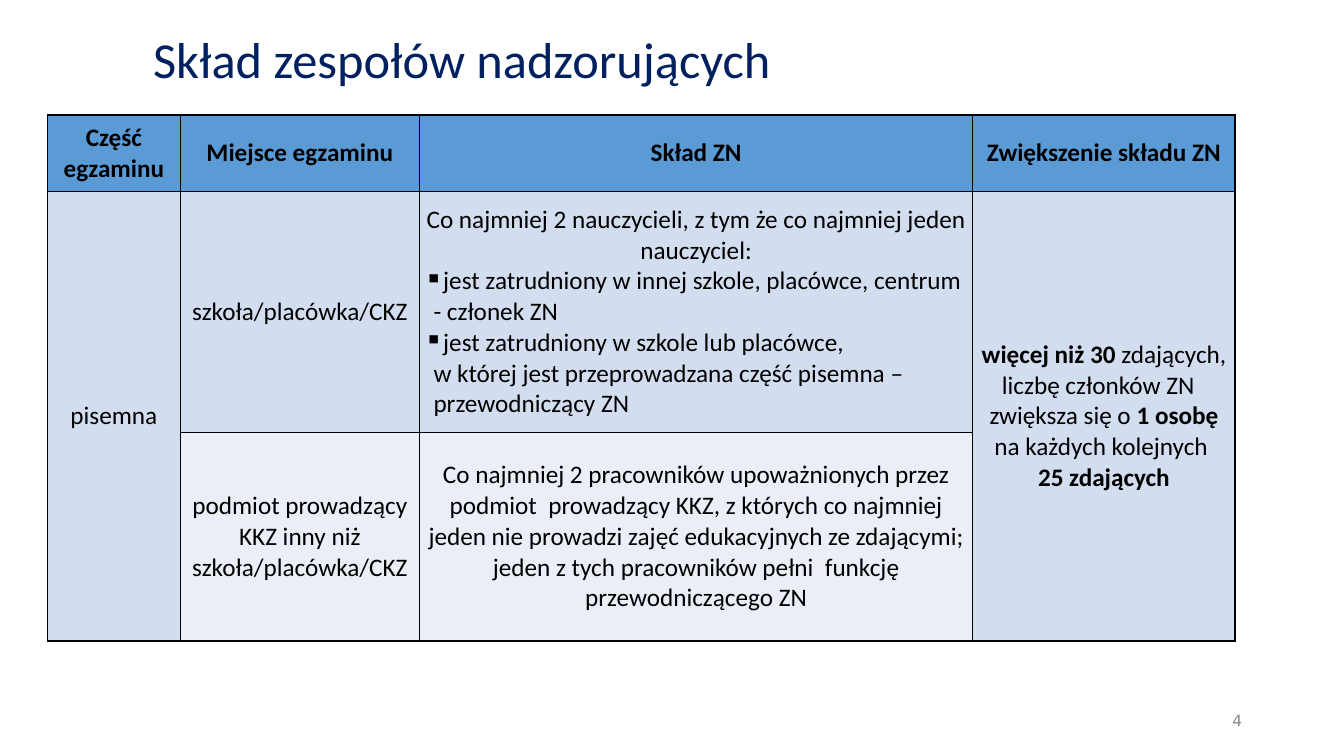
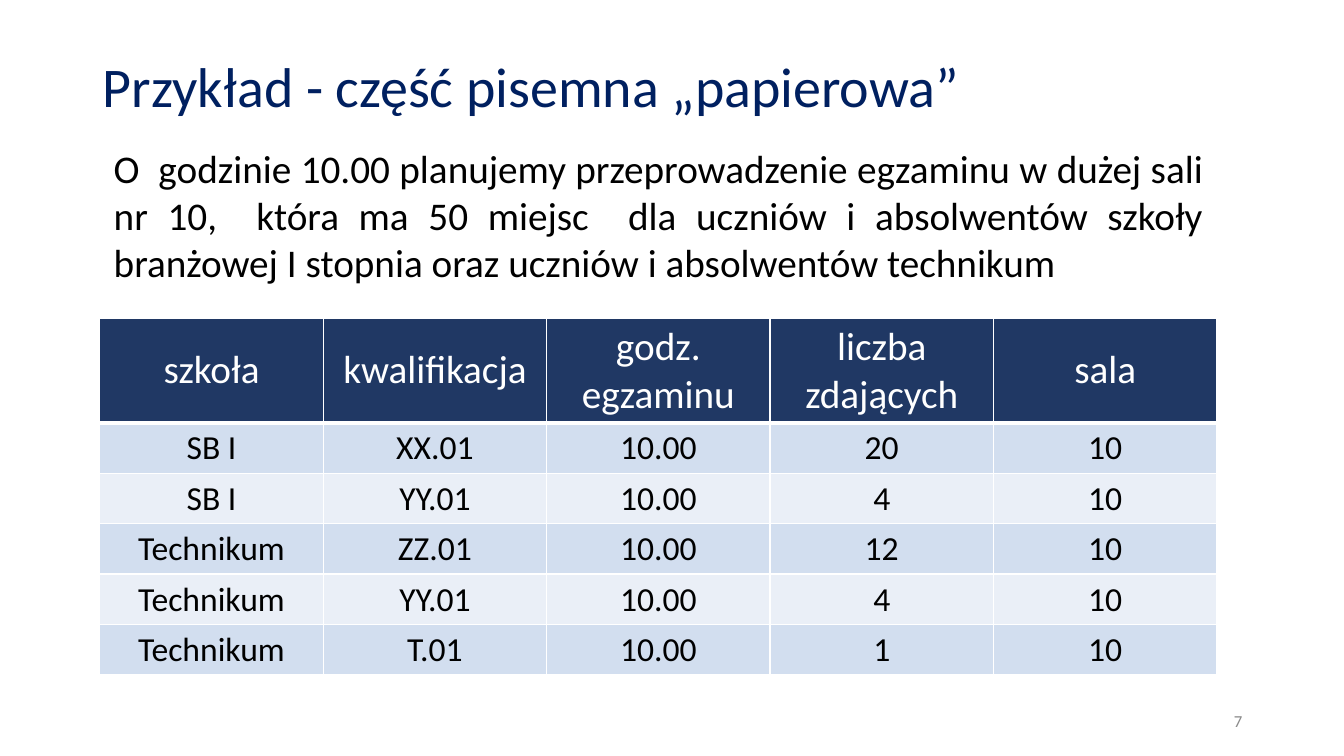
import dataclasses

import pptx
import pptx.dml.color
import pptx.enum.text
import pptx.oxml
import pptx.oxml.ns
import pptx.util

Inches = pptx.util.Inches
Pt = pptx.util.Pt
RGBColor = pptx.dml.color.RGBColor
Align = pptx.enum.text.PP_ALIGN
Anchor = pptx.enum.text.MSO_ANCHOR

NAVY = RGBColor(0x00, 0x20, 0x60)
DARK_BLUE = RGBColor(0x20, 0x38, 0x64)
BLUE = RGBColor(0x5B, 0x9B, 0xD5)
BAND = RGBColor(0xD2, 0xDE, 0xEF)
PALE_BAND = RGBColor(0xEA, 0xEF, 0xF7)
BLACK = RGBColor(0x00, 0x00, 0x00)
WHITE = RGBColor(0xFF, 0xFF, 0xFF)
GRAY = RGBColor(0x89, 0x89, 0x89)


@dataclasses.dataclass
class Paragraph:
    """Spans are (text, bold) pairs; a newline in a text is a line break."""
    spans: list
    align: Align = Align.CENTER
    bullet: str = ""
    space_after: float = 0
    line_spacing: float = 1


@dataclasses.dataclass
class Look:
    """Text size, colour and weight, with the fill and borders of a cell."""
    size: float
    color: RGBColor
    fill: RGBColor = None
    border: RGBColor = WHITE
    bottom: float = 1
    bold: bool = False
    anchor: Anchor = Anchor.MIDDLE
    inset: float = 0.1


class Deck:
    FONT = "Calibri"

    def __init__(self):
        self.deck = pptx.Presentation()
        self.deck.slide_width = Inches(13.33)
        self.deck.slide_height = Inches(7.5)
        self.page = None

    def add_page(self):
        self.page = self.deck.slides.add_slide(self.deck.slide_layouts[6])

    def add_paragraphs(self, frame, paragraphs, size, color, font=FONT):
        for index, source in enumerate(paragraphs):
            para = frame.add_paragraph() if index else frame.paragraphs[0]
            para.alignment = source.align
            para.line_spacing = source.line_spacing
            para.space_after = Pt(source.space_after)
            if source.bullet:
                self.add_bullet(para, source.bullet)
            for text, bold in source.spans:
                for number, line in enumerate(text.split("\n")):
                    if number:
                        para.add_line_break()
                    if line:
                        span = para.add_run()
                        span.text = line
                        span.font.name = font
                        span.font.size = Pt(size)
                        span.font.bold = bold
                        span.font.color.rgb = color

    def add_bullet(self, para, mark):
        properties = para._p.get_or_add_pPr()
        properties.set("marL", str(Inches(0.09)))
        properties.set("indent", str(-Inches(0.09)))
        properties.append(pptx.oxml.parse_xml(
            f'<a:buChar {pptx.oxml.ns.nsdecls("a")} char="{mark}"/>'))

    def add_text(self, place, text, size, color, align=Align.LEFT,
                 anchor=Anchor.MIDDLE, font=FONT, line_spacing=1):
        box = self.page.shapes.add_textbox(*map(Inches, place))
        frame = box.text_frame
        frame.word_wrap = True
        frame.vertical_anchor = anchor
        para = Paragraph([(text, False)], align, line_spacing=line_spacing)
        self.add_paragraphs(frame, [para], size, color, font)

    def add_title(self, place, text, size):
        self.add_text(place, text, size, NAVY, line_spacing=0.9)

    def add_page_number(self, number, size, font=FONT):
        self.add_text((9.42, 6.95, 3, 0.4), str(number), size, GRAY,
                      Align.RIGHT, font=font)

    def add_table(self, left, top, widths, heights, rows, looks):
        """Cells hold a text or a list of paragraphs; None joins the cell above."""
        table = self.page.shapes.add_table(
            len(heights), len(widths), Inches(left), Inches(top),
            Inches(sum(widths)), Inches(sum(heights))).table
        table.first_row = table.horz_banding = False
        for column, width in zip(table.columns, widths):
            column.width = Inches(width)
        for row, height in zip(table.rows, heights):
            row.height = Inches(height)
        for r, (row, look) in enumerate(zip(rows, looks)):
            for c, content in enumerate(row):
                cell = table.cell(r, c)
                self.style_cell(cell, look)
                if content is None:
                    table.cell(r - 1, c).merge(cell)
                    continue
                if isinstance(content, str):
                    content = [Paragraph([(content, look.bold)])]
                self.add_paragraphs(cell.text_frame, content, look.size, look.color)

    def style_cell(self, cell, look):
        properties = cell._tc.get_or_add_tcPr()
        for side in "LRTB":
            width = Pt(look.bottom if side == "B" else 1)
            properties.append(pptx.oxml.parse_xml(
                f'<a:ln{side} {pptx.oxml.ns.nsdecls("a")} w="{width}"><a:solidFill>'
                f'<a:srgbClr val="{look.border}"/></a:solidFill></a:ln{side}>'))
        cell.fill.solid()
        cell.fill.fore_color.rgb = look.fill
        cell.vertical_anchor = look.anchor
        cell.margin_left = cell.margin_right = Inches(look.inset)
        cell.margin_top = cell.margin_bottom = Inches(0.05)


def add_team_page(deck):
    deck.add_page()
    deck.add_title((1.42, 0.34, 9.88, 0.55), "Skład zespołów nadzorujących", 36)
    school_team = [
        Paragraph([("Co najmniej 2 nauczycieli, z tym że co najmniej jeden "
                    "nauczyciel:", False)]),
        Paragraph([("jest zatrudniony w innej szkole, placówce, centrum  "
                    "- członek ZN", False)], Align.LEFT, "▪"),
        Paragraph([("jest zatrudniony w szkole lub placówce, \n"
                    "w której jest przeprowadzana część pisemna – "
                    "przewodniczący ZN", False)], Align.LEFT, "▪"),
    ]
    enlargement = [Paragraph([
        ("więcej niż 30 ", True),
        ("zdających, liczbę członków ZN  \nzwiększa się o ", False),
        ("1 osobę ", True),
        ("na każdych kolejnych \n", False),
        ("25 zdających", True),
    ], space_after=6)]
    rows = [
        ["Część egzaminu", "Miejsce egzaminu", "Skład ZN", "Zwiększenie składu ZN"],
        ["pisemna", "szkoła/placówka/CKZ", school_team, enlargement],
        [None, "podmiot prowadzący KKZ inny niż szkoła/placówka/CKZ",
         "Co najmniej 2 pracowników upoważnionych przez podmiot  prowadzący KKZ, "
         "z których co najmniej jeden nie prowadzi zajęć edukacyjnych ze zdającymi; "
         "jeden z tych pracowników pełni  funkcję przewodniczącego ZN", None],
    ]
    body = Look(18, BLACK, BAND, BLACK, inset=0.05)
    looks = [dataclasses.replace(body, fill=BLUE, bold=True), body,
             dataclasses.replace(body, fill=PALE_BAND)]
    deck.add_table(0.47, 1.14, [1.32, 2.37, 5.49, 2.6], [0.76, 2.39, 2.07],
                   rows, looks)
    deck.add_page_number(4, 11, "DejaVu Sans")


def add_example_page(deck):
    deck.add_page()
    deck.add_title((0.92, 0.49, 11.5, 0.79),
                   "Przykład - część pisemna „papierowa”", 40)
    deck.add_page_number(7, 12)
    exams = [("SB I", "XX.01", "20"), ("SB I", "YY.01", "4"),
             ("Technikum", "ZZ.01", "12"), ("Technikum", "YY.01", "4"),
             ("Technikum", "T.01", "1")]
    rows = [["szkoła", "kwalifikacja", "godz. egzaminu", "liczba zdających", "sala"]]
    rows += [[school, code, "10.00", count, "10"] for school, code, count in exams]
    looks = [Look(28, WHITE, DARK_BLUE, bottom=3)]
    looks += [Look(24, BLACK, PALE_BAND if index % 2 else BAND, anchor=Anchor.TOP)
              for index in range(len(exams))]
    deck.add_table(0.99, 3.16, [11.08 / 5] * 5, [1.03] + [0.5] * len(exams),
                   rows, looks)
    deck.add_text(
        (1.03, 1.38, 11, 1.51),
        "O  godzinie 10.00 planujemy przeprowadzenie egzaminu w dużej sali nr 10,  "
        "która ma 50 miejsc  dla uczniów i absolwentów szkoły branżowej I stopnia "
        "oraz uczniów i absolwentów technikum",
        28, BLACK, Align.JUSTIFY, Anchor.TOP)


def main():
    deck = Deck()
    add_team_page(deck)
    add_example_page(deck)
    deck.deck.save("out.pptx")


if __name__ == "__main__":
    main()
